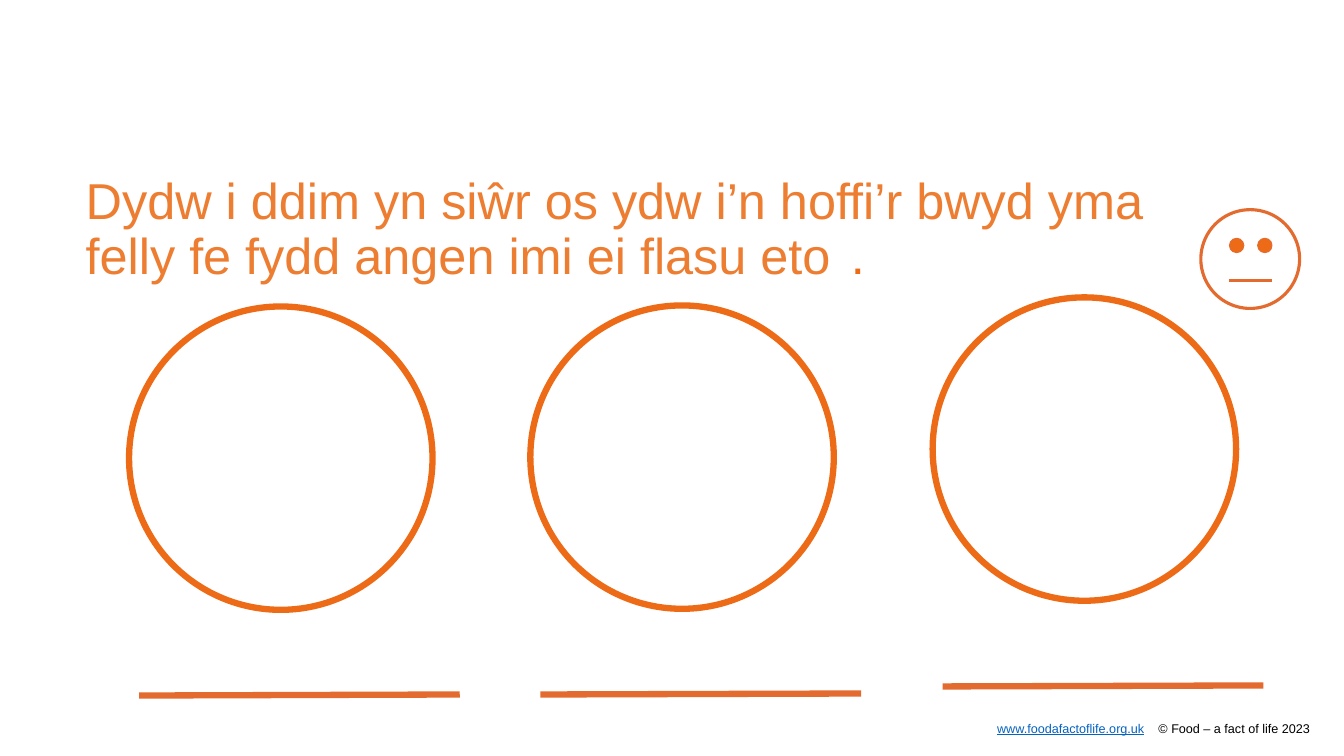
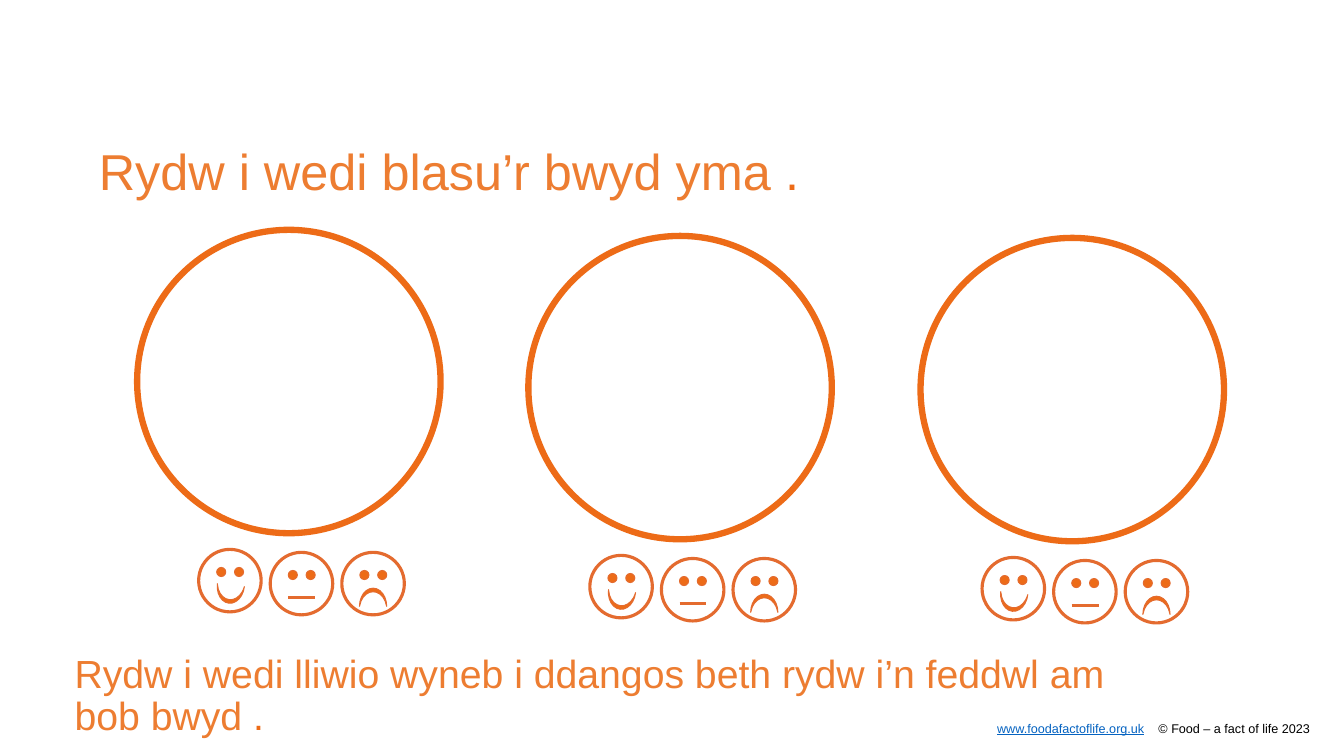
from dataclasses import dataclass
from typing import Optional

from lxml import etree
from pptx import Presentation
from pptx.dml.color import RGBColor
from pptx.enum.shapes import MSO_CONNECTOR, MSO_SHAPE
from pptx.enum.text import MSO_ANCHOR, MSO_AUTO_SIZE, PP_ALIGN
from pptx.oxml.ns import qn
from pptx.util import Inches, Pt

OVAL = MSO_SHAPE.OVAL
MOON = MSO_SHAPE.MOON
STRAIGHT = MSO_CONNECTOR.STRAIGHT
LEFT = PP_ALIGN.LEFT
TOP = MSO_ANCHOR.TOP
NO_AUTOFIT = MSO_AUTO_SIZE.NONE

ORANGE = RGBColor(0xED, 0x6B, 0x17)
OUTLINE = RGBColor(0xE4, 0x6B, 0x2F)
HEADING = RGBColor(0xED, 0x7D, 0x31)
LINK = RGBColor(0x05, 0x63, 0xC1)
BLACK = RGBColor(0, 0, 0)
WHITE = RGBColor(0xFF, 0xFF, 0xFF)

FONT = "Arial"
RING_SIZE = 3.01
RING_WEIGHT = 4.5
SMALL_FACE = 0.62
LARGE_FACE = 0.98
FACE_PITCH = 0.71
SMILE, NEUTRAL, FROWN = "smile", "neutral", "frown"
MOUTH_ROTATION = {SMILE: 276.2, FROWN: 90}


@dataclass(frozen=True)
class TextPart:
    text: str
    colour: RGBColor
    underline: bool = False
    size: Optional[float] = None
    font: Optional[str] = None


@dataclass(frozen=True)
class Ring:
    left: float
    top: float


WRITING_RINGS = [Ring(1.28, 3.04), Ring(5.26, 3.03), Ring(9.25, 2.95)]
RATING_RINGS = [Ring(1.36, 2.28), Ring(5.24, 2.34), Ring(9.13, 2.36)]


def write_text(shape, parts: list[TextPart], size: float, spacing: float = 1.0) -> None:
    """Fill a shape's single, left-aligned paragraph from coloured parts."""
    frame = shape.text_frame
    frame.word_wrap = True
    frame.auto_size = NO_AUTOFIT
    frame.vertical_anchor = TOP
    frame.margin_left = frame.margin_top = frame.margin_right = frame.margin_bottom = 0
    paragraph = frame.paragraphs[0]
    paragraph.alignment = LEFT
    paragraph.line_spacing = spacing
    paragraph.font.name = FONT
    paragraph.font.size = Pt(size)
    for part in parts:
        run = paragraph.add_run()
        run.text = part.text
        run.font.color.rgb = part.colour
        if part.underline:
            run.font.underline = True
        if part.size:
            run.font.size = Pt(part.size)
        if part.font:
            run.font.name = part.font


def add_footer(slide, layout) -> None:
    """Draw the footer and move it to the layout, so every slide shows it."""
    footer = slide.shapes.add_textbox(Inches(9.89), Inches(7.15), Inches(3.2), Inches(0.15))
    paragraph = footer.text_frame.paragraphs[0]
    properties = paragraph._p.get_or_add_pPr()
    tabs = etree.SubElement(properties, qn("a:tabLst"))
    etree.SubElement(tabs, qn("a:tab"), pos=str(Inches(1.6)), algn="l")
    write_text(footer, [
        TextPart("www.foodafactoflife.org.uk", LINK, underline=True),
        TextPart("\t© Food – a fact of life 2023", BLACK),
    ], 9)
    layout.shapes.element.append(footer.element)


def add_title(slide, left: float, top: float, parts: list[TextPart]) -> None:
    title = slide.shapes.title
    title.left, title.top = Inches(left), Inches(top)
    title.width, title.height = Inches(10.63), Inches(0.79)
    write_text(title, parts, 36, 0.9)


def add_figure(shapes, kind, left: float, top: float, width: float, height: float,
               fill: Optional[RGBColor], line: RGBColor, weight: float):
    shape = shapes.add_shape(kind, Inches(left), Inches(top), Inches(width), Inches(height))
    shape.shadow.inherit = False
    if fill is None:
        shape.fill.background()
    else:
        shape.fill.solid()
        shape.fill.fore_color.rgb = fill
    shape.line.color.rgb = line
    shape.line.width = Pt(weight)
    return shape


def add_line(shapes, start: tuple[float, float], end: tuple[float, float], weight: float) -> None:
    points = [Inches(value) for value in (*start, *end)]
    connector = shapes.add_connector(STRAIGHT, *points)
    connector.line.color.rgb = OUTLINE
    connector.line.width = Pt(weight)
    etree.SubElement(connector.element.spPr, qn("a:effectLst"))


def add_ring(shapes, ring: Ring) -> None:
    add_figure(shapes, OVAL, ring.left, ring.top, RING_SIZE, RING_SIZE,
               None, ORANGE, RING_WEIGHT)


def add_face(shapes, left: float, top: float, size: float, mood: str) -> None:
    """Draw a face whose features keep their proportions at any size."""
    add_figure(shapes, OVAL, left, top, size, size, WHITE, OUTLINE, 2.25)
    eye = size * 0.145
    for offset in (0.29, 0.575):
        add_figure(shapes, OVAL, left + size * offset, top + size * 0.29, eye, eye,
                   ORANGE, OUTLINE, 0.75)
    if mood == NEUTRAL:
        mouth_top = top + size * 0.72
        add_line(shapes, (left + size * 0.29, mouth_top),
                 (left + size * 0.72, mouth_top), 2.25)
    else:
        mouth = add_figure(shapes, MOON, left + size * 0.355, top + size * 0.5,
                           size * 0.29, size * 0.435, ORANGE, OUTLINE, 0.75)
        mouth.adjustments[0] = 0.195
        mouth.rotation = MOUTH_ROTATION[mood]


def build_unsure_slide(slide) -> None:
    add_title(slide, 0.85, 1.75, [
        TextPart("Dydw i ddim yn siŵr os ydw i’n hoffi’r bwyd yma felly fe fydd angen imi ei flasu eto ",
                 HEADING),
        TextPart(" ", BLACK, size=18, font="Calibri"),
        TextPart(".", ORANGE),
    ])
    for ring in WRITING_RINGS:
        add_ring(slide.shapes, ring)
        add_line(slide.shapes, (ring.left + 0.1, ring.top + 3.86),
                 (ring.left + 3.28, ring.top + 3.85), RING_WEIGHT)
    face = slide.shapes.add_group_shape()
    add_face(face.shapes, 11.91, 2.08, LARGE_FACE, NEUTRAL)


def build_rating_slide(slide) -> None:
    add_title(slide, 0.98, 1.46, [
        TextPart("Rydw i wedi blasu’r bwyd yma ", HEADING),
        TextPart(".", ORANGE),
    ])
    instruction = slide.shapes.add_textbox(Inches(0.74), Inches(6.49), Inches(10.63), Inches(0.79))
    write_text(instruction, [
        TextPart("Rydw i wedi lliwio wyneb i ddangos beth rydw i’n feddwl am bob bwyd ", HEADING),
        TextPart(".", ORANGE),
    ], 28, 0.9)
    for ring in RATING_RINGS:
        group = slide.shapes.add_group_shape()
        add_ring(group.shapes, ring)
        for index, mood in enumerate((SMILE, NEUTRAL, FROWN)):
            drop = 3.17 if mood == SMILE else 3.2
            add_face(group.shapes, ring.left + 0.61 + index * FACE_PITCH,
                     ring.top + drop, SMALL_FACE, mood)


def main() -> None:
    presentation = Presentation()
    presentation.slide_width = Inches(13.33)
    presentation.slide_height = Inches(7.5)
    layout = presentation.slide_layouts.get_by_name("Title Only")
    unsure_slide = presentation.slides.add_slide(layout)
    rating_slide = presentation.slides.add_slide(layout)
    add_footer(unsure_slide, layout)
    build_unsure_slide(unsure_slide)
    build_rating_slide(rating_slide)
    presentation.save("out.pptx")


if __name__ == "__main__":
    main()
